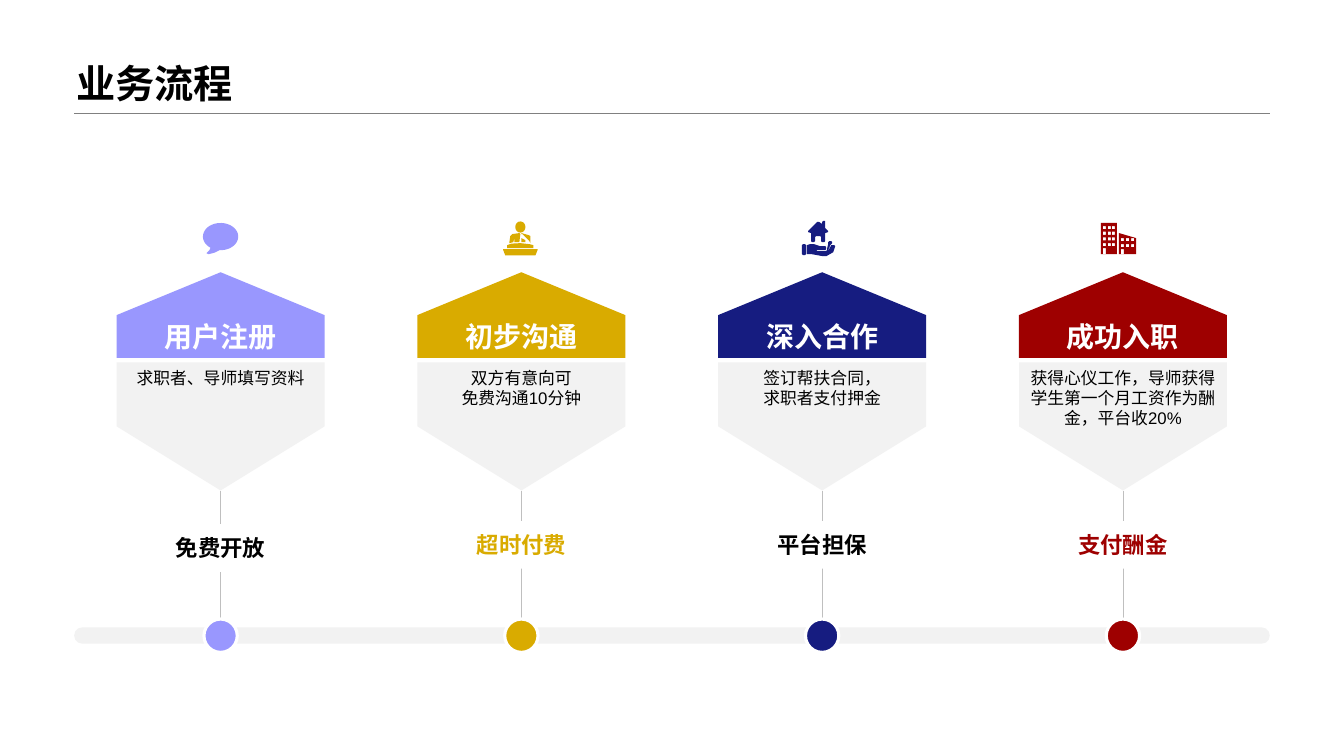
from dataclasses import dataclass
from math import cos, radians, sin

from lxml.etree import SubElement
from pptx import Presentation
from pptx.dml.color import RGBColor
from pptx.enum.shapes import MSO_CONNECTOR, MSO_SHAPE
from pptx.enum.text import MSO_ANCHOR, PP_ALIGN
from pptx.oxml.ns import qn
from pptx.util import Cm, Pt


@dataclass(frozen=True)
class Theme:
    """Colours, fonts and type sizes of the slide."""
    black: str = "000000"
    white: str = "FFFFFF"
    panel: str = "F2F2F2"
    rule: str = "808080"
    stem: str = "BFBFBF"
    lilac: str = "9997FE"
    gold: str = "D9AB00"
    navy: str = "161C80"
    red: str = "9E0000"
    latin: str = "Arial"
    cjk: str = "Noto Sans CJK SC"
    title_size: int = 28
    heading_size: int = 20
    tag_size: int = 16
    body_size: int = 12


T = Theme()


@dataclass(frozen=True)
class Step:
    """One stage of the process."""
    heading: str
    body: str
    tag: str
    color: str
    tag_color: str
    icon: list
    font: str = T.latin
    tag_drop: float = 0


def arc(cx, cy, rx, ry, start=0, end=360):
    """Return points along an elliptical arc, angles in degrees."""
    angles = [radians(start + (end - start) * i / 40) for i in range(41)]
    return [(cx + rx * cos(a), cy + ry * sin(a)) for a in angles]


def rect(x, y, w, h):
    """Return the corners of a rectangle."""
    return [(x, y), (x + w, y), (x + w, y + h), (x, y + h)]


BUBBLE = [arc(0, -1.5, 17.5, 13.5, 125, 453) + [(-6, 14.5), (-12, 16), (-14, 15), (-11, 12)]]
SPEAKER = [
    arc(-1, -11, 5, 5.5),
    [(-12, 5), (-11, -2), (-9, -4), (-2, -5), (-1, -4), (-2, 4), (-7, 4), (-7, 0), (-8, 4)],
    [(0, -5), (7, -3), (9, -2), (9, 5), (8, 3), (3, -2), (1, -4), (0, -4)],
    [(0, 0), (4, 2), (4, 4), (0, 4)],
    [(-14, 10), (-14, 7), (-10, 5.5), (-1, 5), (8, 6), (12, 7), (12, 10)],
    [(-18, 11), (16, 11), (16, 12), (14, 17), (-16, 17), (-18, 12)],
]
HOUSE_IN_HAND = [
    [(1, -17), (3, -17), (3, -10), (6, -7), (6, -6), (3, -5), (3, 3), (2, 4), (0, 4), (-1, 3),
     (-1, -1), (-2, -2), (-6, -2), (-7, -1), (-7, 3), (-8, 4), (-10, 4), (-11, 3), (-11, -5),
     (-14, -6), (-14, -7), (-5, -16), (-3, -16), (0, -14), (0, -16)],
    [(-19, 6), (-17, 6), (-16, 7), (-16, 16), (-17, 17), (-19, 17), (-20, 16), (-20, 7)],
    [(-15, 7), (-12, 6), (-8, 6), (-2, 8), (3, 8), (4, 9), (4, 11), (3, 12), (-5, 12), (-6, 13),
     (3, 13), (7, 11), (9, 7), (12, 7), (13, 8), (11, 14), (4, 18), (1, 18), (-10, 16), (-15, 16)],
    [(7, 3), (9, 3), (10, 4), (10, 5), (8, 7), (7, 10), (5, 12), (5, 10), (6, 6), (6, 4)],
]
BUILDINGS = [
    rect(-22, -15, 16, 31),
    *(rect(x, -12 + 5.7 * row, 3, 3) for x in (-20, -15, -11) for row in range(4)),
    rect(-20, 10, 3, 6),
    [(-4, -5), (13, 0), (13, 16), (-4, 16)],
    *(rect(x, y, 3, 3) for x in (-2, 3, 8) for y in (0, 6)),
    rect(-2, 11, 3, 5),
]

STEPS = [
    Step("用户注册", "求职者、导师填写资料", "免费开放", T.lilac, T.black, BUBBLE, T.cjk, 0.08),
    Step("初步沟通", "双方有意向可\n免费沟通10分钟", "超时付费", T.gold, T.gold, SPEAKER),
    Step("深入合作", "签订帮扶合同，\n求职者支付押金", "平台担保", T.navy, T.black, HOUSE_IN_HAND),
    Step("成功入职", "获得心仪工作，导师获得学生第一个月工资作为酬金，平台收20%",
         "支付酬金", T.red, T.red, BUILDINGS),
]


def paint(sp, color):
    """Give a shape a flat fill without line or shadow."""
    sp.shadow.inherit = False
    sp.fill.solid()
    sp.fill.fore_color.rgb = RGBColor.from_string(color)
    sp.line.fill.background()
    return sp


def add_block(s, kind, x, y, w, h, color, rotation=0):
    """Add a flat preset shape that fills the box, even when turned sideways."""
    if rotation:
        x, y, w, h = x + (w - h) / 2, y + (h - w) / 2, h, w
    sp = paint(s.shapes.add_shape(kind, Cm(x), Cm(y), Cm(w), Cm(h)), color)
    sp.rotation = rotation
    return sp


def add_line(s, x1, y1, x2, y2, color):
    """Add a hairline."""
    line = s.shapes.add_connector(MSO_CONNECTOR.STRAIGHT, Cm(x1), Cm(y1), Cm(x2), Cm(y2))
    line.line.color.rgb = RGBColor.from_string(color)
    line.line.width = Pt(0.25)
    SubElement(line._element.spPr, qn("a:effectLst"))


def add_icon(s, x, y, contours, color):
    """Draw contours, in hundredths of an inch, around a centre."""
    unit = Cm(2.54) / 100
    paths = [[(round(px * unit), round(py * unit)) for px, py in c] for c in contours]
    builder = s.shapes.build_freeform(*paths[0][0], scale=1.0)
    for i, points in enumerate(paths):
        if i:
            builder.move_to(*points[0])
        builder.add_line_segments(points[1:], close=True)
    paint(builder.convert_to_shape(Cm(x), Cm(y)), color)


def write(sp, text, size, color, bold=False, anchor=MSO_ANCHOR.TOP,
          align=PP_ALIGN.CENTER, font=T.latin):
    """Set and format the text of a shape."""
    tf = sp.text_frame
    tf.word_wrap = True
    tf.vertical_anchor = anchor
    tf.text = text
    for p in tf.paragraphs:
        p.alignment = align
        for r in p.runs:
            r.font.size, r.font.bold, r.font.name = Pt(size), bold, font
            r.font.color.rgb = RGBColor.from_string(color)
            SubElement(r._r.get_or_add_rPr(), qn("a:ea"), typeface=T.cjk)


def add_text(s, x, y, w, h, text, size, color, **style):
    """Add a formatted text box."""
    tb = s.shapes.add_textbox(Cm(x), Cm(y), Cm(w), Cm(h))
    write(tb, text, size, color, **style)
    return tb


def add_header(s, x, y, w, h):
    """Place the slide title above its rule."""
    tb = add_text(s, x - 0.2, y, w, h, "业务流程", T.title_size, T.black, bold=True,
                  anchor=MSO_ANCHOR.BOTTOM, align=PP_ALIGN.LEFT)
    tb.text_frame.paragraphs[0].line_spacing = 0.9
    add_line(s, x, y + h + 0.04, x + w, y + h + 0.04, T.rule)


def add_step(s, x, y, w, h, step):
    """Place one column, from its icon down to its dot on the track."""
    mid, dot = x + w / 2, 0.84
    add_icon(s, mid, y + 0.4, step.icon, step.color)
    add_block(s, MSO_SHAPE.PENTAGON, x, y + 1.26, w, 2.16, step.color, 270)
    add_block(s, MSO_SHAPE.PENTAGON, x, y + 3.53, w, 3.23, T.panel, 90)
    add_text(s, x, y + 2.23, w, 1.2, step.heading, T.heading_size, T.white, bold=True,
             anchor=MSO_ANCHOR.BOTTOM, font=step.font)
    add_text(s, x, y + 3.54, w, 1.9, step.body, T.body_size, T.black)
    add_line(s, mid, y + 6.76, mid, y + h - dot, T.stem)
    tag = add_block(s, MSO_SHAPE.RECTANGLE, x, y + 7.53 + step.tag_drop, w, 1.2, T.white)
    write(tag, step.tag, T.tag_size, step.tag_color, bold=True, anchor=MSO_ANCHOR.MIDDLE)
    sp = add_block(s, MSO_SHAPE.OVAL, mid - dot / 2, y + h - dot, dot, dot, step.color)
    sp.line.color.rgb = RGBColor.from_string(T.white)
    sp.line.width = Pt(2.25)


def add_process(s, x, y, w, h):
    """Place the track and the evenly spaced steps on it."""
    track = add_block(s, MSO_SHAPE.ROUNDED_RECTANGLE, x, y + h - 0.63, w, 0.41, T.panel)
    track.adjustments[0] = 0.5
    for i, step in enumerate(STEPS):
        add_step(s, x + 1.07 + 7.58 * i, y, 5.24, h, step)


def main():
    """Build and save the slide."""
    prs = Presentation()
    prs.slide_width, prs.slide_height = Cm(33.87), Cm(19.05)
    s = prs.slides.add_slide(prs.slide_layouts[6])
    add_header(s, 1.87, 0, 30.13, 2.82)
    add_process(s, 1.87, 5.6, 30.13, 10.84)
    prs.save("out.pptx")


if __name__ == "__main__":
    main()
